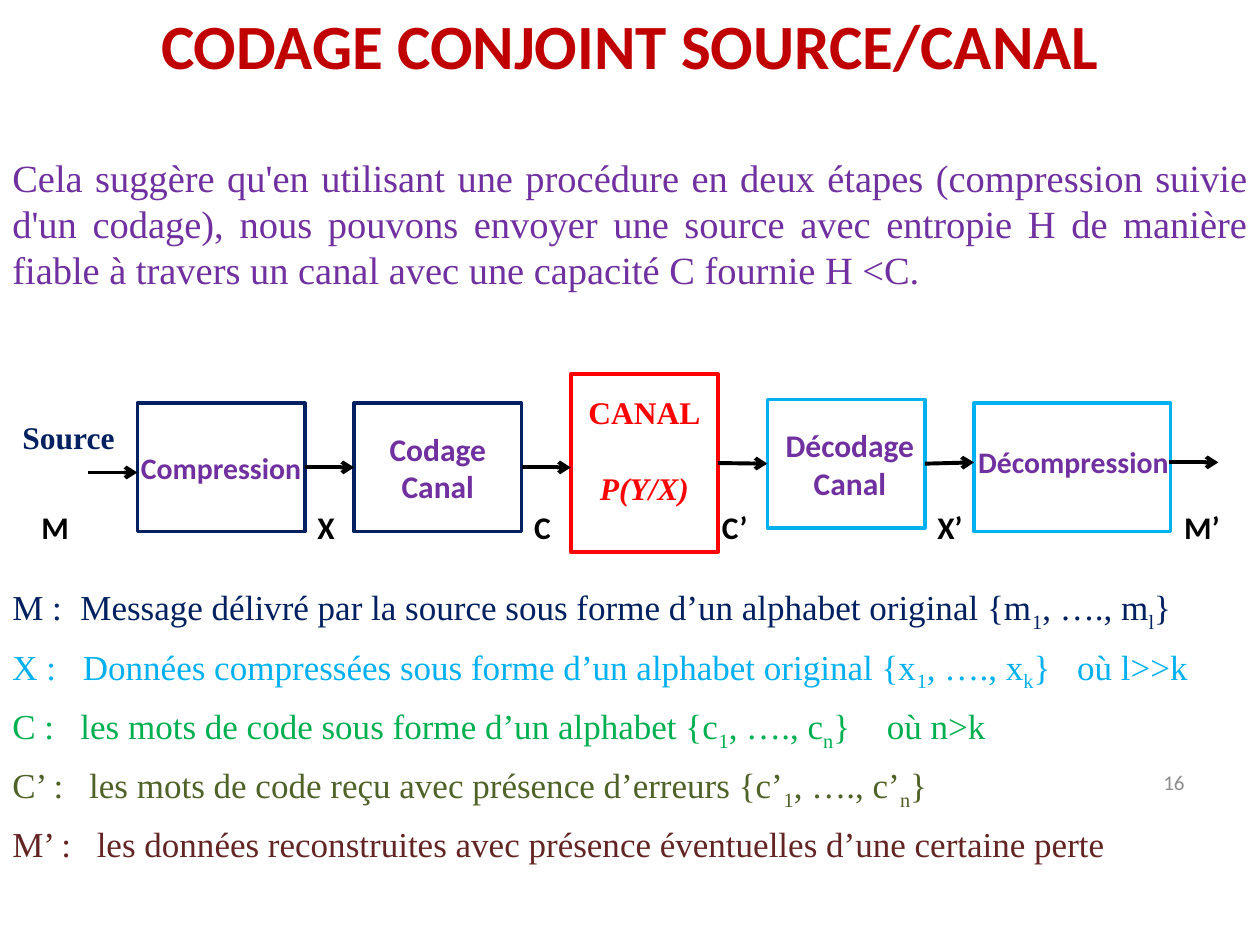
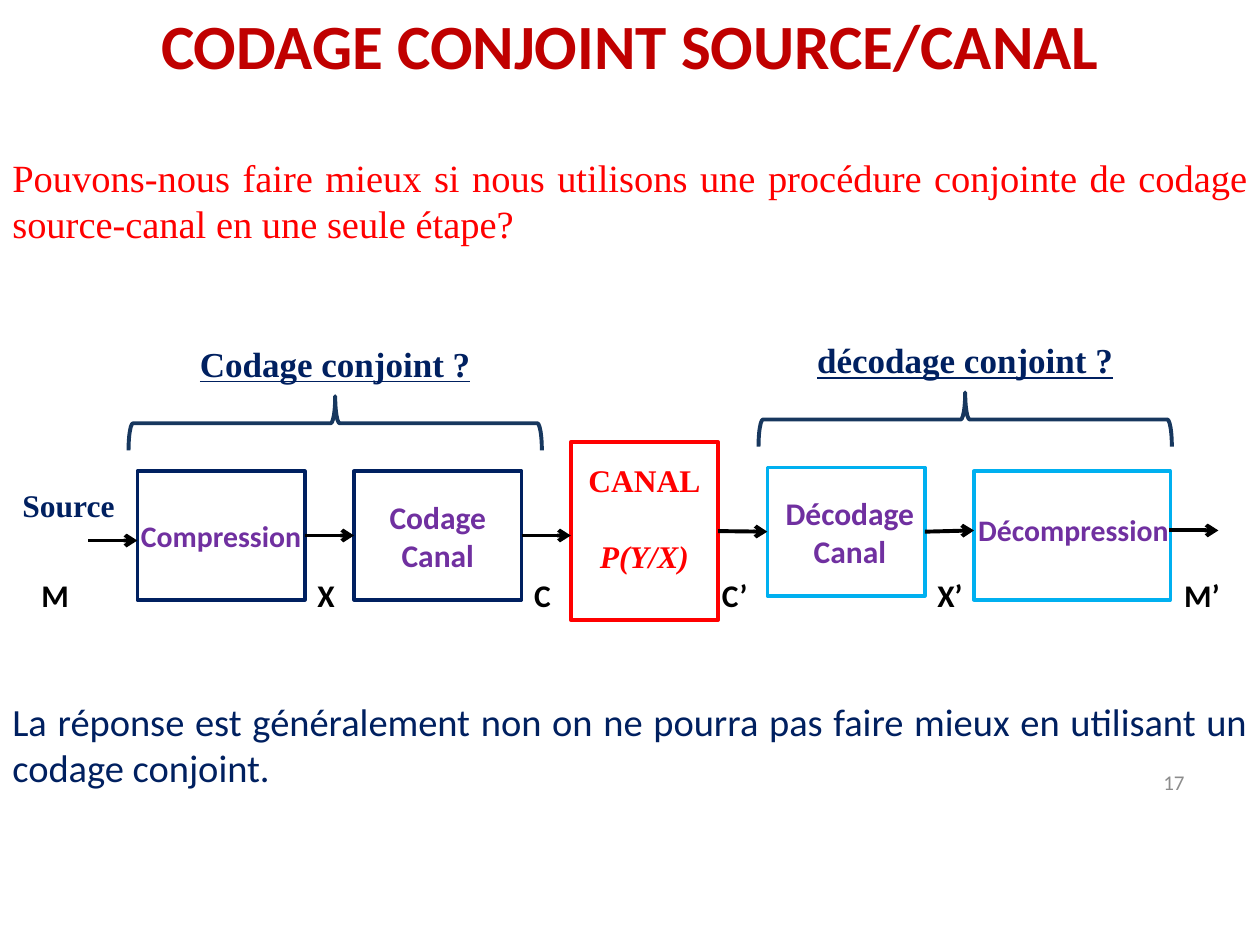
from dataclasses import dataclass

from lxml.etree import SubElement
from pptx import Presentation
from pptx.dml.color import RGBColor as Rgb
from pptx.enum.shapes import MSO_CONNECTOR as Connector, MSO_SHAPE as Shape
from pptx.enum.text import MSO_ANCHOR as Anchor, PP_ALIGN as Align
from pptx.oxml.ns import qn
from pptx.util import Inches, Pt


@dataclass(frozen=True)
class Theme:
    sans: str = "Calibri"
    serif: str = "Times New Roman"
    title: str = "C00000"
    navy: str = "002060"
    sky: str = "00B0F0"
    purple: str = "7030A0"
    red: str = "FF0000"
    green: str = "00B050"
    olive: str = "4F6228"
    maroon: str = "632523"
    brace: str = "17375E"
    grey: str = "8C8C8C"
    black: str = "000000"
    white: str = "FFFFFF"
    title_size: int = 36
    body_size: int = 22
    legend_size: int = 20
    label_size: int = 18
    long_label_size: int = 17
    number_size: int = 12
    thin: float = 2
    thick: float = 2.25


T = Theme()


def style(face, size, colour, **extra):
    return {"name": face, "size": Pt(size), "colour": colour, **extra}


TITLE_STYLE = style(T.sans, T.title_size, T.title, bold=True)
SIGNAL_STYLE = style(T.sans, T.label_size, T.black, bold=True)
SOURCE_STYLE = style(T.serif, T.label_size, T.navy, bold=True)
CANAL_STYLE = style(T.serif, T.label_size, T.red, bold=True)
STAGE_STYLE = style(T.sans, T.label_size, T.purple, bold=True)
LONG_STAGE_STYLE = style(T.sans, T.long_label_size, T.purple, bold=True)
BRACE_STYLE = style(T.serif, T.legend_size, T.navy, bold=True, underline=True)
NUMBER_STYLE = style(T.sans, T.number_size, T.grey)

# ---- Content -------------------------------------------------------------
TITLE = "CODAGE CONJOINT SOURCE/CANAL"

# name: left, top below the diagram's top, width, height, outline, text style,
# margins of the text (left, top, bottom)
STAGES = {
    "Compression": (1.09, 0, 1.33, 1.02, T.navy, LONG_STAGE_STYLE, (0, 0, 0)),
    "Codage Canal": (2.81, 0, 1.33, 1.02, T.navy, STAGE_STYLE, (0, 0, 0)),
    "Décodage Canal": (6.09, -0.03, 1.25, 1.02, T.sky, STAGE_STYLE, (0.06, 0, 0)),
    "Décompression": (7.73, 0, 1.56, 1.02, T.sky, LONG_STAGE_STYLE, (0.02, 0, 0.09)),
}
CANAL_BOX = (4.53, -0.23, 1.17, 1.41)
CANAL_LINES = ("CANAL", "P(Y/X)")

# left end, height of both ends, stage joined at the start, stage joined at the end
ARROWS = [
    (0.7, (0.55, 0.55), None, None),
    (2.42, (0.52, 0.52), "Compression", "Codage Canal"),
    (4.14, (0.5, 0.51), "Codage Canal", None),
    (5.7, (0.47, 0.47), "CANAL", "Décodage Canal"),
    (7.34, (0.47, 0.47), "Décodage Canal", None),
    (9.28, (0.47, 0.47), None, None),
]
ARROW_LENGTH = 0.39
SIGNALS = [("M", 0.23), ("X", 2.42), ("C", 4.14), ("C’", 5.63), ("X’", 7.34), ("M’", 9.3)]

# "_" lowers the next letter; tab stops in inches
LEGEND = [
    (T.navy, [0.54],
     "M :\tMessage délivré par la source sous forme d’un alphabet original {m_1, …., m_l}"),
    (T.sky, [0.56, 8.45],
     "X :\tDonnées compressées sous forme d’un alphabet original {x_1, …., x_k}\toù l>>k"),
    (T.green, [0.54, 6.94],
     "C :\tles mots de code sous forme d’un alphabet {c_1, …., c_n}\toù n>k"),
    (T.olive, [0.61],
     "C’ :\tles mots de code reçu avec présence d’erreurs {c’_1, …., c’_n}"),
    (T.maroon, [0.67],
     "M’ :\tles données reconstruites avec présence éventuelles d’une certaine perte"),
]
LEGEND_TOP, LEGEND_PITCH = 4.6, 0.47

# text, left and top of the label
BRACES = [("Codage conjoint ?", 0.94, 2.67), ("décodage conjoint ?", 5.94, 2.64)]

SLIDES = [
    {
        "number": "16",
        "intro": "Cela suggère qu'en utilisant une procédure en deux étapes (compression "
                 "suivie d'un codage), nous pouvons envoyer une source avec entropie H de "
                 "manière fiable à travers un canal avec une capacité C fournie H <C.",
        "intro_colour": T.purple,
        "diagram_top": 3.2,
        "legend": LEGEND,
    },
    {
        "number": "17",
        "intro": "Pouvons-nous faire mieux si nous utilisons une procédure conjointe de "
                 "codage source-canal en une seule étape?",
        "intro_colour": T.red,
        "diagram_top": 3.74,
        "braces": BRACES,
        "answer": "La réponse est généralement non on ne pourra pas faire mieux en "
                  "utilisant un codage conjoint.",
    },
]


# ---- Helpers -------------------------------------------------------------
def apply_format(font, values):
    for key, value in values.items():
        if key == "colour":
            font.color.rgb = Rgb.from_string(value)
        else:
            setattr(font, key, value)


def write(paragraph, text, values, align=Align.LEFT):
    paragraph.alignment = align
    for index, piece in enumerate(text.split("_")):
        parts = [(piece, False)] if index == 0 else [(piece[0], True), (piece[1:], False)]
        for part, lowered in parts:
            run = paragraph.add_run()
            run.text = part
            apply_format(run.font, values)
            if lowered:
                run._r.get_or_add_rPr().set("baseline", "-25000")


def add_label(slide, box, text, values, align=Align.LEFT, anchor=Anchor.TOP):
    frame = slide.shapes.add_textbox(*map(Inches, box)).text_frame
    frame.word_wrap = True
    frame.vertical_anchor = anchor
    write(frame.paragraphs[0], text, values, align)
    return frame.paragraphs[0]


def set_tabs(paragraph, stops):
    tabs = SubElement(paragraph._p.get_or_add_pPr(), qn("a:tabLst"))
    for stop in stops:
        SubElement(tabs, qn("a:tab"), pos=str(Inches(stop)), algn="l")


def add_outline(slide, kind, box, colour, weight, fill=None):
    shape = slide.shapes.add_shape(kind, *map(Inches, box))
    shape.shadow.inherit = False
    shape.line.color.rgb = Rgb.from_string(colour)
    shape.line.width = Pt(weight)
    if fill:
        shape.fill.solid()
        shape.fill.fore_color.rgb = Rgb.from_string(fill)
    else:
        shape.fill.background()
    return shape


def set_margins(frame, left=0, top=0, bottom=0):
    frame.word_wrap = True
    margins = {"left": left, "top": top, "right": 0, "bottom": bottom}
    for side, value in margins.items():
        setattr(frame, f"margin_{side}", Inches(value))


def add_arrow(slide, start, end, source=None, target=None):
    arrow = slide.shapes.add_connector(Connector.STRAIGHT, *map(Inches, start + end))
    if source:
        arrow.begin_connect(source, 3)
    if target:
        arrow.end_connect(target, 1)
    arrow.line.color.rgb = Rgb.from_string(T.black)
    arrow.line.width = Pt(T.thick)
    SubElement(arrow.line._get_or_add_ln(), qn("a:tailEnd"), type="arrow")
    SubElement(arrow._element.spPr, qn("a:effectLst"))


# ---- Parts of a slide ----------------------------------------------------
def add_chain(slide, top):
    stages = {}
    for name, (left, drop, width, height, colour, values, margins) in STAGES.items():
        stage = add_outline(slide, Shape.RECTANGLE, (left, top + drop, width, height),
                            colour, T.thin)
        set_margins(stage.text_frame, *margins)
        stage.text_frame.vertical_anchor = Anchor.MIDDLE
        write(stage.text_frame.paragraphs[0], name, values, Align.CENTER)
        stages[name] = stage

    # Channel: name above, transition law below in italics
    left, drop, width, height = CANAL_BOX
    canal = add_outline(slide, Shape.RECTANGLE, (left, top + drop, width, height),
                        T.red, T.thick, T.white)
    set_margins(canal.text_frame, top=0.15)
    canal.text_frame.vertical_anchor = Anchor.TOP
    name, law = CANAL_LINES
    write(canal.text_frame.paragraphs[0], name, CANAL_STYLE, Align.CENTER)
    law_line = canal.text_frame.add_paragraph()
    write(law_line, law, {**CANAL_STYLE, "italic": True}, Align.CENTER)
    law_line.space_before = Pt(22)
    stages["CANAL"] = canal

    # Arrows and the signals they carry
    for left, (start, end), source, target in ARROWS:
        add_arrow(slide, (left, top + start), (left + ARROW_LENGTH, top + end),
                  stages.get(source), stages.get(target))
    add_label(slide, (0.08, top + 0.07, 0.96, 0.4), "Source", SOURCE_STYLE)
    for signal, left in SIGNALS:
        add_label(slide, (left, top + 0.78, 0.55, 0.4), signal, SIGNAL_STYLE)


def add_legend(slide, legend):
    for row, (colour, stops, text) in enumerate(legend):
        entry = add_label(slide, (0, LEGEND_TOP + row * LEGEND_PITCH, 10, 0.44), text,
                          style(T.serif, T.legend_size, colour))
        set_tabs(entry, stops)


def add_braces(slide, braces):
    label_width, depth, span = 3.44, 0.43, 3.28
    for text, left, top in braces:
        add_label(slide, (left, top, label_width, 0.44), text, BRACE_STYLE, Align.CENTER)
        # The frame is given before its quarter turn
        centre = left + label_width / 2
        brace = add_outline(slide, Shape.LEFT_BRACE,
                            (centre - depth / 2, top - 0.95, depth, span), T.brace, T.thick)
        brace.rotation = 90


def add_slide(deck, content):
    slide = deck.slides.add_slide(deck.slide_layouts[6])
    add_label(slide, (7.17, 6.01, 2.33, 0.4), content["number"], NUMBER_STYLE,
              Align.RIGHT, Anchor.MIDDLE)
    add_label(slide, (0, 0, 10, 0.71), TITLE, TITLE_STYLE, Align.CENTER)
    add_label(slide, (0, 1.17, 10, 1.21), content["intro"],
              style(T.serif, T.body_size, content["intro_colour"]), Align.JUSTIFY)
    add_chain(slide, content["diagram_top"])
    add_legend(slide, content.get("legend", []))
    add_braces(slide, content.get("braces", []))
    if "answer" in content:
        add_label(slide, (0, 5.49, 10, 0.84), content["answer"],
                  style(T.sans, T.body_size, T.navy), Align.JUSTIFY)


def main():
    deck = Presentation()
    deck.slide_width, deck.slide_height = Inches(10), Inches(7.5)
    for content in SLIDES:
        add_slide(deck, content)
    deck.save("out.pptx")


if __name__ == "__main__":
    main()
